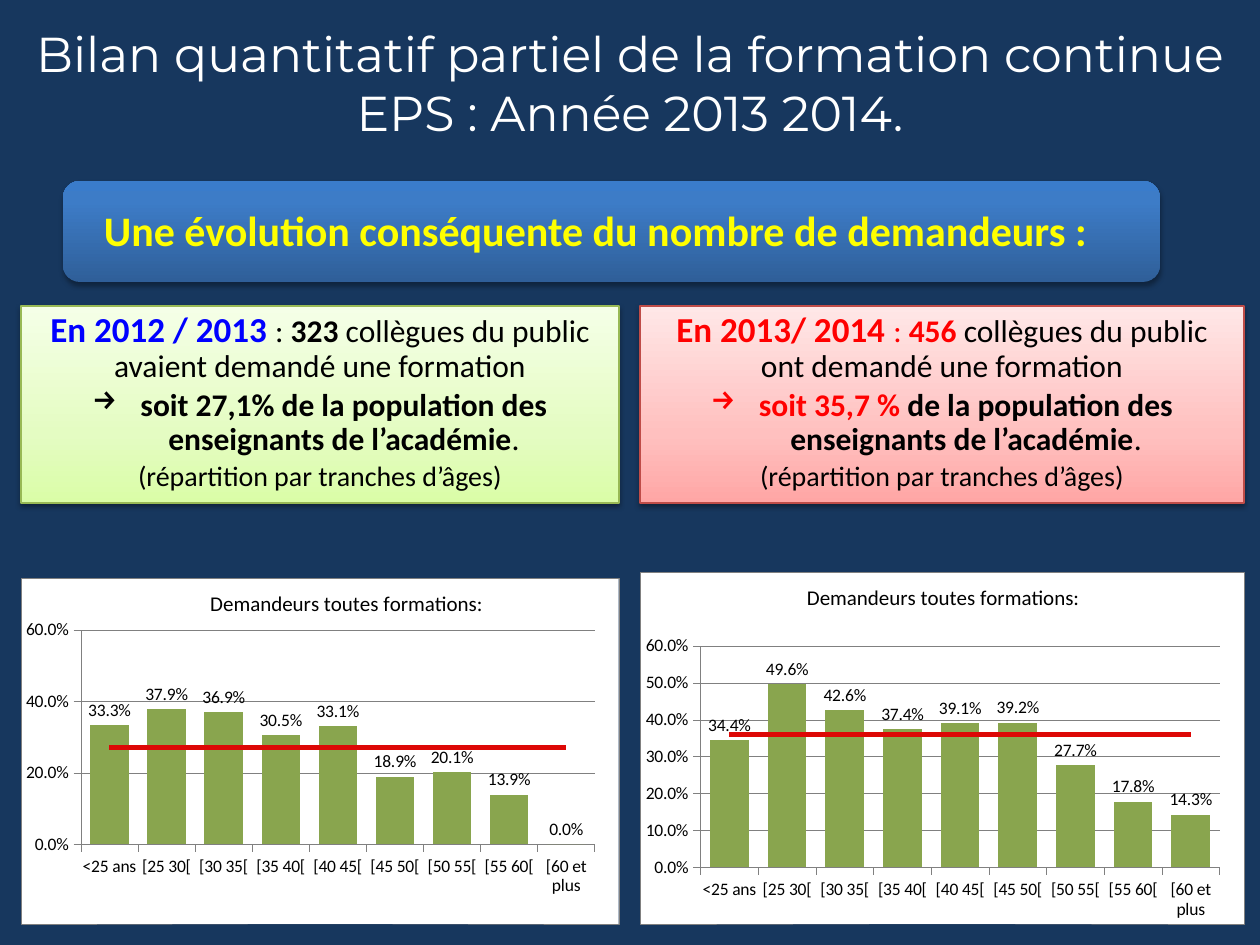
"""Build the slide on requests for teacher training, with two age-band charts."""
from dataclasses import dataclass
from typing import Any, Optional

from pptx import Presentation
from pptx.chart.data import CategoryChartData
from pptx.dml.color import RGBColor
from pptx.enum.chart import XL_CHART_TYPE, XL_LABEL_POSITION, XL_MARKER_STYLE, XL_TICK_MARK
from pptx.enum.shapes import MSO_SHAPE
from pptx.enum.text import MSO_ANCHOR, PP_ALIGN
from pptx.oxml import parse_xml
from pptx.oxml.ns import nsdecls, qn
from pptx.util import Emu, Pt

COLUMNS = XL_CHART_TYPE.COLUMN_CLUSTERED
OUTSIDE_END = XL_LABEL_POSITION.OUTSIDE_END
NO_MARKER = XL_MARKER_STYLE.NONE
TICK_OUT, TICK_NONE = XL_TICK_MARK.OUTSIDE, XL_TICK_MARK.NONE
RECTANGLE, ROUNDED = MSO_SHAPE.RECTANGLE, MSO_SHAPE.ROUNDED_RECTANGLE
TOP, MIDDLE = MSO_ANCHOR.TOP, MSO_ANCHOR.MIDDLE
LEFT, CENTER = PP_ALIGN.LEFT, PP_ALIGN.CENTER

NAVY = RGBColor(0x17, 0x37, 0x5E)
WHITE = RGBColor(0xFF, 0xFF, 0xFF)
BLACK = RGBColor(0, 0, 0)
YELLOW = RGBColor(0xFF, 0xFF, 0)
BLUE = RGBColor(0, 0, 0xFF)
RED = RGBColor(0xFF, 0, 0)
GRAY = RGBColor(0x80, 0x80, 0x80)
BAR_GREEN = RGBColor(0x89, 0xA5, 0x4E)
MEAN_RED = RGBColor(0xDD, 0x08, 0x06)
GREEN_EDGE = RGBColor(0x98, 0xB9, 0x55)
RED_EDGE = RGBColor(0xBF, 0x4C, 0x48)
BANNER_FADE = {0: RGBColor(0x2F, 0x5F, 0x99), 80: RGBColor(0x3D, 0x7C, 0xC7), 100: RGBColor(0x3A, 0x7C, 0xCB)}
GREEN_FADE = {0: RGBColor(0xDA, 0xFD, 0xA7), 35: RGBColor(0xE4, 0xFC, 0xC2), 100: RGBColor(0xF5, 0xFF, 0xE7)}
RED_FADE = {0: RGBColor(0xFF, 0xA6, 0xA5), 35: RGBColor(0xFF, 0xC0, 0xBF), 100: RGBColor(0xFF, 0xE7, 0xE7)}
PX = 914400 / 126
AGES = ["<25 ans", "[25 30[", "[30 35[", "[35 40[", "[40 45[", "[45 50[", "[50 55[", "[55 60[", "[60 et plus"]


@dataclass(frozen=True)
class Area:
    left: int
    top: int
    width: int
    height: int

    def emu(self) -> list[Emu]:
        return [px(value) for value in (self.left, self.top, self.width, self.height)]


@dataclass(frozen=True)
class Span:
    text: str
    size: int = 18
    color: RGBColor = BLACK
    bold: bool = False
    name: str = "Calibri"


@dataclass(frozen=True)
class Para:
    spans: list[Span]
    align: Any = CENTER
    spacing: float = 0.9
    after: int = 3
    arrow: bool = False


@dataclass(frozen=True)
class Card:
    area: Area
    fade: dict[int, RGBColor]
    edge: RGBColor
    paras: list[Para]


@dataclass(frozen=True)
class AgeChart:
    area: Area
    shares: list[float]
    mean: float
    title_at: dict[str, float]
    plot_at: dict[str, float]
    scale: dict[str, float]


CLOSING = Para([Span("(répartition par tranches d’âges)", 16)])
CARDS = [
    Card(Area(21, 306, 598, 197), GREEN_FADE, GREEN_EDGE, [
        Para([Span("En 2012 / 2013 ", 20, BLUE, True), Span(": "), Span("323", bold=True),
              Span(" collègues du public avaient demandé une formation")]),
        Para([Span("soit 27,1% de la population des enseignants de l’académie", bold=True), Span(".")], arrow=True),
        CLOSING]),
    Card(Area(640, 306, 604, 197), RED_FADE, RED_EDGE, [
        Para([Span("En 2013/ 2014 ", 20, RED, True), Span(": ", color=RED), Span("456 ", color=RED, bold=True),
              Span("collègues du public ont demandé une formation")]),
        Para([Span("soit 35,7 % ", color=RED, bold=True),
              Span("de la population des enseignants de l’académie", bold=True), Span(".")], arrow=True),
        CLOSING]),
]
CHARTS = [
    AgeChart(Area(21, 578, 598, 346), [0.333, 0.379, 0.369, 0.305, 0.331, 0.189, 0.201, 0.139, 0], 0.27,
             {"x": 0.31, "y": 0.02}, {"x": 0.1, "y": 0.15, "w": 0.86, "h": 0.62},
             {"minimum_scale": 0, "maximum_scale": 0.6, "major_unit": 0.2}),
    AgeChart(Area(640, 572, 604, 352), [0.344, 0.496, 0.426, 0.374, 0.391, 0.392, 0.277, 0.178, 0.143], 0.36,
             {"x": 0.27, "y": 0.02}, {"x": 0.1, "y": 0.21, "w": 0.86, "h": 0.63}, {}),
]


def px(value: int) -> Emu:
    return Emu(round(value * PX))


def set_all(target: Any, values: dict[str, Any]) -> None:
    for name, value in values.items():
        setattr(target, name, value)


def style_font(font: Any, size: int, color: RGBColor = BLACK, bold: bool = False, name: str = "Calibri") -> None:
    set_all(font, {"size": Pt(size), "bold": bold, "name": name})
    font.color.rgb = color


def style_line(line: Any, color: RGBColor, width: float) -> None:
    line.color.rgb = color
    line.width = Pt(width)


def drop(owner: Any, tag: str) -> None:
    for child in owner.findall(qn(tag)):
        owner.remove(child)


def write(frame: Any, paras: list[Para], anchor: Any = TOP, side: int = 13, edge: int = 6) -> None:
    set_all(frame, {"word_wrap": True, "vertical_anchor": anchor, "margin_left": px(side),
                    "margin_right": px(side), "margin_top": px(edge), "margin_bottom": px(edge)})
    for index, item in enumerate(paras):
        para = frame.add_paragraph() if index else frame.paragraphs[0]
        set_all(para, {"alignment": item.align, "line_spacing": item.spacing, "space_after": Pt(item.after)})
        if item.arrow:
            props = para._p.get_or_add_pPr()
            props.set("marL", str(px(48)))
            props.set("indent", str(-px(48)))
            props.append(parse_xml(f'<a:buChar {nsdecls("a")} char="→"/>'))
        for span in item.spans:
            run = para.add_run()
            run.text = span.text
            style_font(run.font, span.size, span.color, span.bold, span.name)


def add_panel(shapes: Any, kind: Any, area: Area, fade: dict[int, RGBColor], alpha: int, distance: float) -> Any:
    panel = shapes.add_shape(kind, *area.emu())
    panel.fill.background()
    panel.line.fill.background()
    panel.shadow.inherit = False
    props = panel._element.spPr
    stops = "".join(f'<a:gs pos="{at * 1000}"><a:srgbClr val="{color}"/></a:gs>' for at, color in fade.items())
    props.replace(props.find(qn("a:noFill")), parse_xml(
        f'<a:gradFill {nsdecls("a")}><a:gsLst>{stops}</a:gsLst><a:lin ang="16200000" scaled="0"/></a:gradFill>'))
    props.find(qn("a:effectLst")).append(parse_xml(
        f'<a:outerShdw {nsdecls("a")} blurRad="{Pt(3.1)}" dist="{Pt(distance)}" dir="5400000" rotWithShape="0">'
        f'<a:srgbClr val="{BLACK}"><a:alpha val="{alpha * 1000}"/></a:srgbClr></a:outerShdw>'))
    return panel


def place(owner: Any, values: dict[str, float], after: Optional[Any] = None, target: str = "") -> None:
    drop(owner, "c:layout")
    modes = '<c:xMode val="edge"/><c:yMode val="edge"/>'
    sizes = "".join(f'<c:{key} val="{value}"/>' for key, value in values.items())
    layout = parse_xml(f'<c:layout {nsdecls("c")}><c:manualLayout>{target}{modes}{sizes}</c:manualLayout></c:layout>')
    owner.insert(0 if after is None else owner.index(after) + 1, layout)


def area_format(border: str) -> Any:
    return parse_xml(f'<c:spPr {nsdecls("c", "a")}><a:solidFill><a:srgbClr val="{WHITE}"/></a:solidFill>'
                     f'<a:ln w="{Pt(0.25)}">{border}</a:ln></c:spPr>')


def add_mean_line(chart: Any) -> None:
    bars = chart.plots[0]
    mean = bars.series[1]._element
    drop(mean, "c:invertIfNegative")
    axes = "".join(f'<c:axId val="{axis.get("val")}"/>' for axis in bars._element.findall(qn("c:axId")))
    line_plot = parse_xml(f'<c:lineChart {nsdecls("c")}><c:grouping val="stacked"/><c:varyColors val="0"/>'
                          f'<c:marker val="1"/>{axes}</c:lineChart>')
    line_plot.insert(2, mean)
    bars._element.addnext(line_plot)
    series = chart.plots[1].series[0]
    series.smooth = False
    series.marker.style = NO_MARKER
    style_line(series.format.line, MEAN_RED, 3)


def add_age_chart(shapes: Any, item: AgeChart) -> None:
    data = CategoryChartData(number_format="0.0%")
    data.categories = AGES
    data.add_series("Series 1", item.shares)
    data.add_series("Series 2", [item.mean] * len(AGES))
    chart = shapes.add_chart(COLUMNS, *item.area.emu(), data).chart
    style_font(chart.font, 10)
    chart.has_legend = False
    title = chart.chart_title
    title.text_frame.text = "Demandeurs toutes formations:"
    style_font(title.text_frame.paragraphs[0].runs[0].font, 12)
    place(title._element, item.title_at, title._element.find(qn("c:tx")))
    space = chart._chartSpace
    space.chart.addnext(area_format(f'<a:solidFill><a:srgbClr val="{GRAY}"/></a:solidFill>'))
    place(space.chart.plotArea, item.plot_at, target='<c:layoutTarget val="inner"/>')
    space.chart.plotArea.append(area_format("<a:noFill/>"))
    add_mean_line(chart)
    set_all(chart.plots[0], {"gap_width": 49, "vary_by_categories": False})
    shares = chart.plots[0].series[0]
    shares.format.fill.solid()
    shares.format.fill.fore_color.rgb = BAR_GREEN
    percent = {"number_format": "0.0%", "number_format_is_linked": False}
    set_all(shares.data_labels, {"show_value": True, "position": OUTSIDE_END, **percent})
    style_font(shares.data_labels.font, 10)
    for axis in (chart.category_axis, chart.value_axis):
        set_all(axis, {"major_tick_mark": TICK_OUT, "minor_tick_mark": TICK_NONE})
        style_font(axis.tick_labels.font, 10)
        style_line(axis.format.line, GRAY, 0.25)
    set_all(chart.value_axis, {"has_major_gridlines": True, **item.scale})
    style_line(chart.value_axis.major_gridlines.format.line, GRAY, 0.25)
    set_all(chart.value_axis.tick_labels, percent)


def main() -> None:
    deck = Presentation()
    set_all(deck, {"slide_width": px(1260), "slide_height": px(945)})
    page = deck.slides.add_slide(deck.slide_layouts[6])
    page.background.fill.solid()
    page.background.fill.fore_color.rgb = NAVY
    heading = page.shapes.add_textbox(*Area(0, 0, 1260, 165).emu())
    heading_span = Span("Bilan quantitatif partiel de la formation continue EPS : Année 2013 2014.", 28, WHITE,
                        name="Montserrat")
    write(heading.text_frame, [Para([heading_span], spacing=1.0, after=0)], MIDDLE)
    banner = page.shapes.add_group_shape().shapes
    add_panel(banner, ROUNDED, Area(63, 181, 1097, 101), BANNER_FADE, 35, 1.8)
    caption = banner.add_textbox(*Area(71, 187, 1082, 91).emu())
    caption_span = Span("Une évolution conséquente du nombre de demandeurs :", 24, YELLOW, True)
    write(caption.text_frame, [Para([caption_span], LEFT, after=8)], MIDDLE, 33, 0)
    for item in CHARTS:
        add_age_chart(page.shapes, item)
    for card in CARDS:
        panel = add_panel(page.shapes, RECTANGLE, card.area, card.fade, 38, 1.6)
        style_line(panel.line, card.edge, 0.75)
        write(panel.text_frame, card.paras)
    deck.save("out.pptx")


if __name__ == "__main__":
    main()
